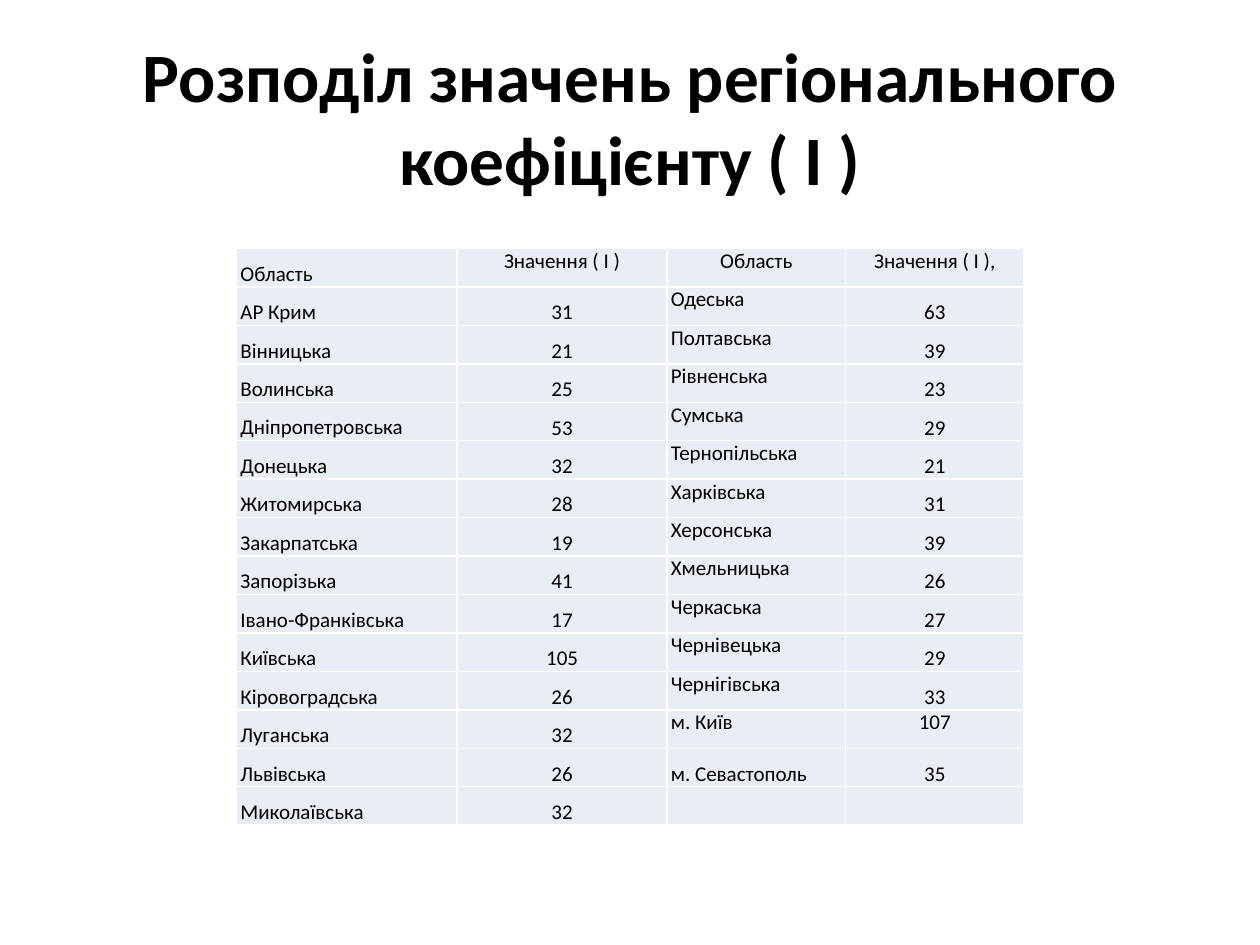
from lxml.etree import SubElement
from pptx import Presentation
from pptx.dml.color import RGBColor
from pptx.enum.text import MSO_ANCHOR as Anchor, MSO_AUTO_SIZE as AutoSize, PP_ALIGN as Align
from pptx.oxml.ns import qn
from pptx.util import Pt

TITLE = "Розподіл значень регіонального коефіцієнту ( І )"
ROWS = [
    ("Область", "Значення ( І )", "Область", "Значення ( І ),"),
    ("АР Крим", "31", "Одеська", "63"),
    ("Вінницька", "21", "Полтавська", "39"),
    ("Волинська", "25", "Рівненська", "23"),
    ("Дніпропетровська", "53", "Сумська", "29"),
    ("Донецька", "32", "Тернопільська", "21"),
    ("Житомирська", "28", "Харківська", "31"),
    ("Закарпатська", "19", "Херсонська", "39"),
    ("Запорізька", "41", "Хмельницька", "26"),
    ("Івано-Франківська", "17", "Черкаська", "27"),
    ("Київська", "105", "Чернівецька", "29"),
    ("Кіровоградська", "26", "Чернігівська", "33"),
    ("Луганська", "32", "м. Київ", "107"),
    ("Львівська", "26", "м. Севастополь", "35"),
    ("Миколаївська", "32", "", ""),
]
COLUMN_WIDTHS = [126, 120, 102, 102]
ROW_HEIGHT = 19.3
FIRST_LOOSE_ROW = 13
TOP_VALUES = {(12, 3), (13, 3)}
CELL_FORMAT = {"margin_left": Pt(2.2), "margin_right": Pt(2.2), "margin_top": 0, "margin_bottom": 0}


def color(hex_code):
    return RGBColor.from_string(hex_code)


def set_attributes(target, values):
    for name, value in values.items():
        setattr(target, name, value)


def style_font(font, size, bold):
    set_attributes(font, {"name": "Calibri", "size": Pt(size), "bold": bold})
    font.color.rgb = color("000000")


def add_title(slide):
    title = slide.shapes.title
    set_attributes(title, {"left": Pt(36), "top": Pt(21.6), "width": Pt(648), "height": Pt(90)})
    frame = title.text_frame
    set_attributes(frame, {"text": TITLE, "word_wrap": True, "auto_size": AutoSize.NONE,
                           "vertical_anchor": Anchor.MIDDLE})
    para = frame.paragraphs[0]
    para.alignment = Align.CENTER
    style_font(para.font, 39.6, True)


def add_borders(cell, hex_code, width):
    """Draw all four edges; they must come before the fill in the cell properties."""
    properties = cell._tc.get_or_add_tcPr()
    for edge in ("a:lnL", "a:lnR", "a:lnT", "a:lnB"):
        line = SubElement(properties, qn(edge), w=str(Pt(width)))
        fill = SubElement(line, qn("a:solidFill"))
        SubElement(fill, qn("a:srgbClr"), val=hex_code)


def fill_cell(cell, text, row, column):
    is_value = column % 2 == 1
    at_bottom = is_value and row > 0 and text and (row, column) not in TOP_VALUES
    add_borders(cell, "FFFFFF", 1)
    cell.fill.solid()
    cell.fill.fore_color.rgb = color("E9EDF4")
    set_attributes(cell, CELL_FORMAT)
    cell.vertical_anchor = Anchor.BOTTOM if at_bottom else Anchor.TOP
    cell.text = text
    para = cell.text_frame.paragraphs[0]
    centered = is_value or (row == 0 and column > 0)
    para.alignment = Align.CENTER if centered else Align.LEFT
    if text and (column == 0 or row >= FIRST_LOOSE_ROW):
        para.line_spacing = 1.5
    for run in para.runs:
        style_font(run.font, 12, False)


def add_region_table(slide):
    frame = slide.shapes.add_table(len(ROWS), len(COLUMN_WIDTHS), Pt(135.2), Pt(142),
                                   Pt(sum(COLUMN_WIDTHS)), Pt(ROW_HEIGHT * len(ROWS)))
    table = frame.table
    set_attributes(table, {"first_row": False, "horz_banding": False})
    for column, width in zip(table.columns, COLUMN_WIDTHS):
        column.width = Pt(width)
    for row, texts in enumerate(ROWS):
        for column, text in enumerate(texts):
            fill_cell(table.cell(row, column), text, row, column)


def main():
    deck = Presentation()
    set_attributes(deck, {"slide_width": Pt(720), "slide_height": Pt(540)})
    slide = deck.slides.add_slide(deck.slide_layouts[5])
    add_title(slide)
    add_region_table(slide)
    deck.save("out.pptx")


if __name__ == "__main__":
    main()
